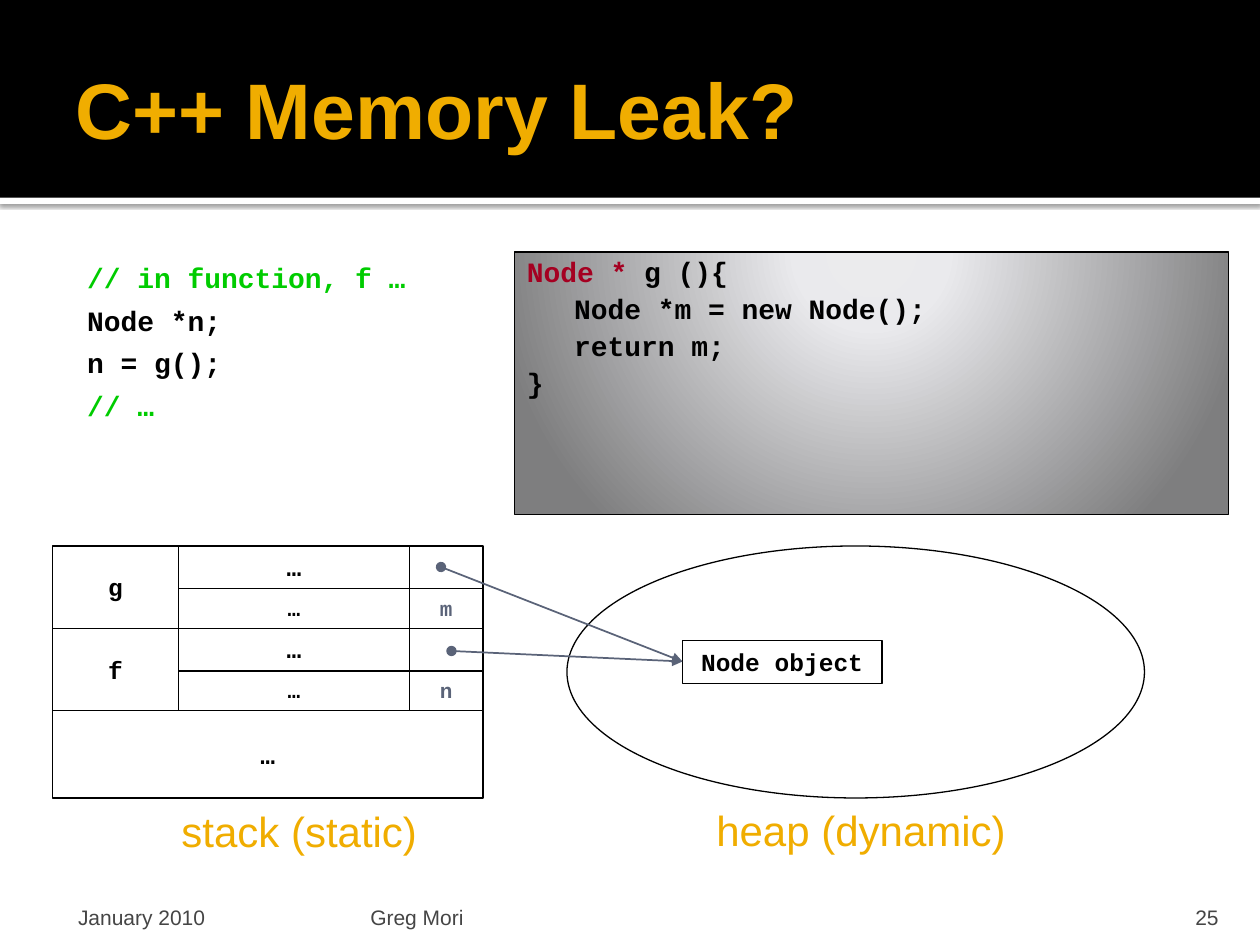
from dataclasses import dataclass

import lxml.etree
import pptx
import pptx.dml.color
import pptx.enum.shapes
import pptx.enum.text
import pptx.oxml
import pptx.oxml.ns
import pptx.util

Pt = pptx.util.Pt
SHAPE = pptx.enum.shapes.MSO_SHAPE
ALIGN = pptx.enum.text.PP_ALIGN
ANCHOR = pptx.enum.text.MSO_ANCHOR
qn = pptx.oxml.ns.qn

BLACK, WHITE, GOLD, SLATE = "000000", "FFFFFF", "F0AD00", "5A6378"
GREEN, RED, GREY = "00CC00", "A50021", "454545"
CODE, SANS = "Courier New", "Arial"


@dataclass
class Box:
    left: float
    top: float
    width: float
    height: float


@dataclass
class Run:
    text: str
    size: float
    color: str = BLACK
    font: str = CODE
    bold: bool = True


@dataclass
class Line:
    runs: list[Run]
    align: ALIGN = ALIGN.LEFT
    before: float = 0
    after: float = 0
    spacing: float = 1.0
    margin: float = 0
    indent: float = 0


def rgb(color: str):
    return pptx.dml.color.RGBColor.from_string(color)


def drawing(tag: str, content: str):
    namespace = pptx.oxml.ns.nsdecls("a")
    return pptx.oxml.parse_xml(f"<a:{tag} {namespace}>{content}</a:{tag}>")


def write(shape, lines: list[Line], anchor=ANCHOR.TOP, insets=(7.2, 3.6, 7.2, 3.6)) -> None:
    frame = shape.text_frame
    frame.word_wrap = True
    frame.vertical_anchor = anchor
    (frame.margin_left, frame.margin_top,
     frame.margin_right, frame.margin_bottom) = map(Pt, insets)
    for number, line in enumerate(lines):
        paragraph = frame.add_paragraph() if number else frame.paragraphs[0]
        paragraph.alignment = line.align
        paragraph.space_before, paragraph.space_after = Pt(line.before), Pt(line.after)
        paragraph.line_spacing = line.spacing
        if line.margin:
            properties = paragraph._p.get_or_add_pPr()
            properties.set("marL", str(Pt(line.margin)))
            properties.set("indent", str(Pt(line.indent)))
        for part in line.runs:
            run = paragraph.add_run()
            run.text = part.text
            run.font.size, run.font.name, run.font.bold = Pt(part.size), part.font, part.bold
            run.font.color.rgb = rgb(part.color)


def add_text(slide, box: Box, lines: list[Line], **layout) -> None:
    area = slide.shapes.add_textbox(Pt(box.left), Pt(box.top), Pt(box.width), Pt(box.height))
    write(area, lines, **layout)


def add_block(slide, box: Box, fill: str | None = None, outline: str | None = BLACK,
              preset=SHAPE.RECTANGLE):
    block = slide.shapes.add_shape(
        preset, Pt(box.left), Pt(box.top), Pt(box.width), Pt(box.height))
    block.shadow.inherit = False
    if fill:
        block.fill.solid()
        block.fill.fore_color.rgb = rgb(fill)
    else:
        block.fill.background()
    if outline:
        block.line.color.rgb = rgb(outline)
        block.line.width = Pt(0.75)
    else:
        block.line.fill.background()
    return block


def add_cell(slide, box: Box, text: str = "", size: float = 14, color: str = BLACK,
             anchor=ANCHOR.TOP, fill: str | None = None) -> None:
    cell = add_block(slide, box, fill)
    if text:
        label = Line([Run(text, size, color)], ALIGN.CENTER, before=1.5)
        write(cell, [label], anchor, (3.6, 3.6, 3.6, 3.6))


def add_stack_frame(slide, top: float, function: str, variable: str) -> None:
    upper, lower = 24.5, 22.5
    add_cell(slide, Box(30, top, 72, upper + lower), function, anchor=ANCHOR.MIDDLE)
    add_cell(slide, Box(102, top, 132, upper), "…")
    add_cell(slide, Box(102, top + upper, 132, lower), "…", 12)
    add_cell(slide, Box(234, top, 42, upper))
    add_cell(slide, Box(234, top + upper, 42, lower), variable, 12, SLATE)


def add_pointer(slide, start: tuple[float, float], end: tuple[float, float]) -> None:
    pointer = slide.shapes.add_connector(
        pptx.enum.shapes.MSO_CONNECTOR.STRAIGHT, *map(Pt, start + end))
    pointer.line.color.rgb = rgb(SLATE)
    pointer.line.width = Pt(1)
    ends = pointer.line._get_or_add_ln()
    for tag, kind in (("headEnd", "oval"), ("tailEnd", "triangle")):
        lxml.etree.SubElement(ends, qn(f"a:{tag}")).set("type", kind)
    pointer._element.spPr.append(drawing("effectLst", ""))


def add_header(slide) -> None:
    rule = add_block(slide, Box(0, 113, 720, 3.5), WHITE, None)
    rule._element.spPr.find(qn("a:effectLst")).append(drawing(
        "outerShdw", f'<a:srgbClr val="{BLACK}"><a:alpha val="60000"/></a:srgbClr>'))
    shadow = rule._element.spPr.find(qn("a:effectLst"))[0]
    for key, value in (("blurRad", Pt(2.5)), ("dist", Pt(0.8)), ("dir", 5400000)):
        shadow.set(key, str(int(value)))
    add_block(slide, Box(0, 0, 720, 113), BLACK, None)
    add_text(slide, Box(36, 12, 648, 99), [Line([Run("C++ Memory Leak?", 45, GOLD, SANS)])],
             anchor=ANCHOR.MIDDLE, insets=(7.2, 3.6, 3.6, 3.6))


def add_code(slide) -> None:
    # Caller
    caller = [("// in function, f …", GREEN), ("Node *n;", BLACK),
              ("n = g();", BLACK), ("// …", GREEN)]
    add_text(slide, Box(36, 144, 258, 150),
             [Line([Run(text, 16, color)], before=1, after=6, spacing=0.9,
                   margin=34.5, indent=-25) for text, color in caller],
             insets=(4.3, 7.2, 7.2, 3.6))

    # Definition of g on a radial gradient
    definition = add_block(slide, Box(294, 144, 408, 150))
    stops = ((0, "EBEBED"), (12, "EBEBED"), (20, "EAEAED"), (100, "7E7E7F"))
    stop_list = "".join(f'<a:gs pos="{place * 1000}"><a:srgbClr val="{color}"/></a:gs>'
                        for place, color in stops)
    gradient = drawing("gradFill", f'<a:gsLst>{stop_list}</a:gsLst><a:path path="circle">'
                       '<a:fillToRect l="10000" t="-25000" r="10000" b="125000"/></a:path>')
    properties = definition._element.spPr
    properties.replace(properties.find(qn("a:noFill")), gradient)
    body = [(0, [Run("Node * ", 16, RED), Run("g (){", 16)]),
            (27, [Run("Node *m = new Node();", 16)]),
            (27, [Run("return m;", 16)]),
            (0, [Run("}", 16)])]
    write(definition, [Line(runs, before=4, spacing=0.9, margin=margin)
                       for margin, runs in body])


def add_memory(slide) -> None:
    # Stack
    add_stack_frame(slide, 312, "g", "m")
    add_stack_frame(slide, 359, "f", "n")
    add_cell(slide, Box(30, 406, 246, 50), "…", anchor=ANCHOR.MIDDLE)

    # Heap
    add_block(slide, Box(324, 312, 330, 144), preset=SHAPE.OVAL)
    add_pointer(slide, (252, 324), (390, 378))
    add_cell(slide, Box(390, 366, 114, 24.5), "Node object", fill=WHITE)
    add_pointer(slide, (258, 372), (390, 378))

    # Captions
    for box, caption in ((Box(66, 457, 210, 36), "stack (static)"),
                         (Box(330, 456, 324, 36), "heap (dynamic)")):
        add_text(slide, box, [Line([Run(caption, 24, GOLD, SANS, False)], ALIGN.CENTER)])


def add_footer(slide) -> None:
    for left, width, text, align, inset in (
            (36, 168, "January 2010", ALIGN.LEFT, 8.6),
            (208, 433, "Greg Mori", ALIGN.LEFT, 3.6),
            (646, 57.5, "25", ALIGN.RIGHT, 7.2)):
        add_text(slide, Box(left, 510, width, 21.5),
                 [Line([Run(text, 12, GREY, SANS, False)], align)],
                 anchor=ANCHOR.BOTTOM, insets=(inset, 3.6, inset, 0))


def main() -> None:
    deck = pptx.Presentation()
    deck.slide_width, deck.slide_height = Pt(720), Pt(540)
    slide = deck.slides.add_slide(deck.slide_layouts[6])
    add_header(slide)
    add_code(slide)
    add_memory(slide)
    add_footer(slide)
    deck.save("out.pptx")


if __name__ == "__main__":
    main()
